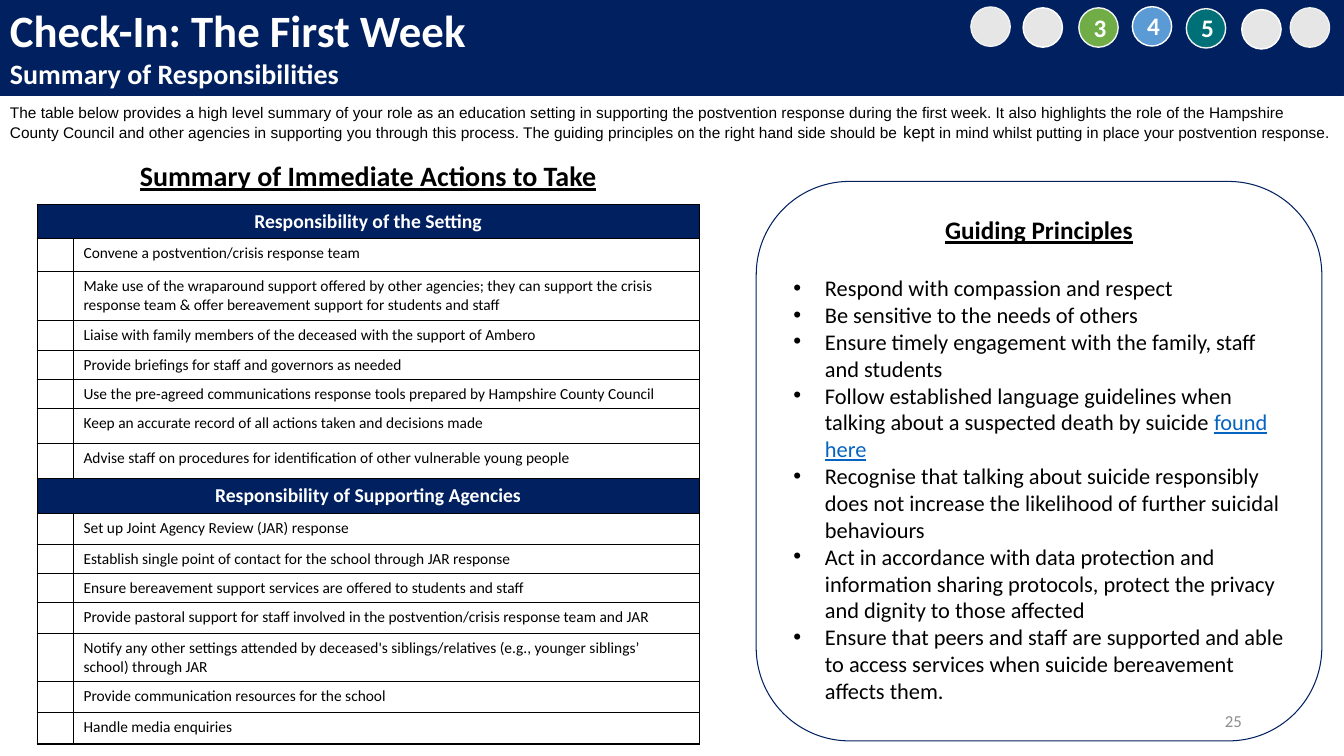
from lxml import etree
from pptx import Presentation
from pptx.dml.color import RGBColor
from pptx.enum.shapes import MSO_SHAPE
from pptx.enum.text import MSO_ANCHOR, PP_ALIGN
from pptx.oxml.ns import qn
from pptx.util import Pt

RECT, ROUNDED = MSO_SHAPE.RECTANGLE, MSO_SHAPE.ROUNDED_RECTANGLE
CIRCLE = MSO_SHAPE.FLOWCHART_CONNECTOR
LEFT, CENTER, RIGHT = PP_ALIGN.LEFT, PP_ALIGN.CENTER, PP_ALIGN.RIGHT
TOP, MIDDLE = MSO_ANCHOR.TOP, MSO_ANCHOR.MIDDLE

NAVY = RGBColor(0x00, 0x20, 0x60)
WHITE = RGBColor(0xFF, 0xFF, 0xFF)
BLACK = RGBColor(0x00, 0x00, 0x00)
PALE = RGBColor(0xF2, 0xF2, 0xF2)
GREY = RGBColor(0xE7, 0xE6, 0xE6)
GREEN = RGBColor(0x70, 0xAD, 0x47)
BLUE = RGBColor(0x5B, 0x9B, 0xD5)
TEAL = RGBColor(0x00, 0x70, 0x78)
LINK = RGBColor(0x05, 0x63, 0xC1)
NUMBER_GREY = RGBColor(0x8C, 0x8C, 0x8C)

# Content
TITLE = "Check-In: The First Week"
SUBTITLE = "Summary of Responsibilities"
INTRO = [
    ("The table below provides a high level summary of your role as an education setting in "
     "supporting the postvention response during the first week. It also highlights the role of "
     "the Hampshire County Council and other agencies in supporting you through this process. "
     "The guiding principles on the right hand side should be ", 11),
    ("kept", 12),
    (" in mind whilst putting in place your postvention response.", 11),
]
# Table rows: kind, text, height
ACTIONS = [
    ("title", "Summary of Immediate Actions to Take", 35.3),
    ("header", "Responsibility of the Setting", 24),
    ("item", "Convene a postvention/crisis response team", 23.5),
    ("item", "Make use of the wraparound support offered by other agencies; they can support the "
             "crisis response team & offer bereavement support for students and staff", 35),
    ("item", "Liaise with family members of the deceased with the support of Ambero", 21.5),
    ("item", "Provide briefings for staff and governors as needed", 20.7),
    ("item", "Use the pre-agreed communications response tools prepared by Hampshire County "
             "Council", 20.6),
    ("item", "Keep an accurate record of all actions taken and decisions made", 25),
    ("item", "Advise staff on procedures for identification of other vulnerable young people", 25),
    ("header", "Responsibility of Supporting Agencies", 25),
    ("item", "Set up Joint Agency Review (JAR) response", 22),
    ("item", "Establish single point of contact for the school through JAR response", 20.6),
    ("item", "Ensure bereavement support services are offered to students and staff", 20.6),
    ("item", "Provide pastoral support for staff involved in the postvention/crisis response "
             "team and JAR", 22),
    ("item", "Notify any other settings attended by deceased's siblings/relatives (e.g., younger "
             "siblings’ school) through JAR", 33.8),
    ("item", "Provide communication resources for the school", 22),
    ("item", "Handle media enquiries", 22.5),
]
ROW_FORMATS = {
    "title": {"size": Pt(20), "bold": True, "underline": True, "color": BLACK},
    "header": {"size": Pt(14), "bold": True, "color": WHITE},
    "item": {"size": Pt(11), "color": BLACK},
}
PRINCIPLES_HEADING = "Guiding Principles"
# Each principle: plain text, link text
PRINCIPLES = [
    ("Respond with compassion and respect", ""),
    ("Be sensitive to the needs of others", ""),
    ("Ensure timely engagement with the family, staff and students", ""),
    ("Follow established language guidelines when talking about a suspected death by suicide ",
     "found here"),
    ("Recognise that talking about suicide responsibly does not increase the likelihood of "
     "further suicidal behaviours", ""),
    ("Act in accordance with data protection and information sharing protocols, protect the "
     "privacy and dignity to those affected", ""),
    ("Ensure that peers and staff are supported and able to access services when suicide "
     "bereavement affects them.", ""),
]
# Step markers: number on the active ones, left, top, fill, line
STEPS = [
    ("", 693.5, 5, GREY, PALE),
    ("", 730.8, 5.6, GREY, WHITE),
    ("3", 770.6, 5.6, GREEN, PALE),
    ("4", 808.8, 4.8, BLUE, WHITE),
    ("5", 847.4, 6.2, TEAL, PALE),
    ("", 887, 6.9, GREY, WHITE),
    ("", 921.6, 5.6, GREY, PALE),
]
STEP_SIZE = 28.1
PAGE = "25"

deck = Presentation()
deck.slide_width, deck.slide_height = Pt(960), Pt(540)
slide = deck.slides.add_slide(deck.slide_layouts[6])


def write(paragraph, text, color=BLACK, name="Calibri", **formats):
    run = paragraph.add_run()
    run.text = text
    run.font.color.rgb = color
    for key, value in {"name": name, **formats}.items():
        setattr(run.font, key, value)


def set_frame(shape, anchor=TOP, wrap=True):
    frame = shape.text_frame
    frame.word_wrap, frame.vertical_anchor = wrap, anchor
    return frame


def add_panel(kind, left, top, width, height, fill, line, weight=0.75):
    panel = slide.shapes.add_shape(kind, Pt(left), Pt(top), Pt(width), Pt(height))
    panel.shadow.inherit = False
    if fill is None:
        panel.fill.background()
    else:
        panel.fill.solid()
        panel.fill.fore_color.rgb = fill
    panel.line.color.rgb, panel.line.width = line, Pt(weight)
    return set_frame(panel, MIDDLE)


def add_text(left, top, width, height, anchor=TOP, wrap=True):
    return set_frame(slide.shapes.add_textbox(Pt(left), Pt(top), Pt(width), Pt(height)),
                     anchor, wrap)


def add_bullet(paragraph):
    props = paragraph._p.get_or_add_pPr()
    props.set("marL", str(Pt(22.5)))
    props.set("indent", str(-Pt(22.5)))
    etree.SubElement(props, qn("a:buFont"), typeface="Arial")
    etree.SubElement(props, qn("a:buChar"), char="•")


def set_borders(cell, visible):
    props = cell._tc.get_or_add_tcPr()
    for side in "LRTB":
        edge = etree.SubElement(props, qn("a:ln" + side), w=str(Pt(1)))
        if side in visible:
            fill = etree.SubElement(edge, qn("a:solidFill"))
            etree.SubElement(fill, qn("a:srgbClr"), val=str(BLACK))
        else:
            etree.SubElement(edge, qn("a:noFill"))


# Title bar
bar = add_panel(RECT, 0, -2.5, 960, 70.6, NAVY, NAVY)
for line, (text, size) in enumerate([(TITLE, 32), (SUBTITLE, 20)]):
    paragraph = bar.add_paragraph() if line else bar.paragraphs[0]
    paragraph.alignment = LEFT
    write(paragraph, text, WHITE, size=Pt(size), bold=True)

# Actions table
actions = slide.shapes.add_table(len(ACTIONS), 2, Pt(26.5), Pt(110.9), Pt(473),
                                 Pt(sum(row[2] for row in ACTIONS))).table
actions.first_row = actions.horz_banding = False
actions.columns[0].width, actions.columns[1].width = Pt(26), Pt(447)
for index, (kind, text, height) in enumerate(ACTIONS):
    actions.rows[index].height = Pt(height)
    check, label = actions.cell(index, 0), actions.cell(index, 1)
    for cell in (check, label):
        set_borders(cell, "B" if kind == "title" else "LRTB")
        cell.fill.solid()
        cell.fill.fore_color.rgb = NAVY if kind == "header" else WHITE
    if kind == "item":
        etree.SubElement(check.text_frame.paragraphs[0]._p, qn("a:endParaRPr"), sz="1100")
    else:
        check.merge(label)
        label = check
    paragraph = label.text_frame.paragraphs[0]
    paragraph.alignment = LEFT if kind == "item" else CENTER
    write(paragraph, text, **ROW_FORMATS[kind])

# Guiding principles
principles = add_panel(ROUNDED, 540.2, 129.6, 404, 399.6, None, NAVY)
principles.margin_bottom = Pt(6.2)
heading = principles.paragraphs[0]
heading.alignment, heading.space_after = CENTER, Pt(21)
write(heading, PRINCIPLES_HEADING, size=Pt(18), bold=True, underline=True)
for text, link in PRINCIPLES:
    paragraph = principles.add_paragraph()
    paragraph.alignment = LEFT
    add_bullet(paragraph)
    write(paragraph, text, size=Pt(16))
    if link:
        write(paragraph, link, LINK, size=Pt(16), underline=True)

# Introduction
intro = add_text(0, 70.2, 960, 35.3).paragraphs[0]
for text, size in INTRO:
    write(intro, text, name="Arial", size=Pt(size))

# Step markers
for number, left, top, fill, line in STEPS:
    add_panel(CIRCLE, left, top, STEP_SIZE, STEP_SIZE, fill, line, 1)
    if number:
        digit = add_text(left + 3.5, top - 0.7, 21, 29, wrap=False).paragraphs[0]
        write(digit, number, WHITE, size=Pt(18), bold=True)

# Page number
page = add_text(678.2, 500.4, 216, 28.8, MIDDLE).paragraphs[0]
page.alignment = RIGHT
write(page, PAGE, NUMBER_GREY, size=Pt(12))

deck.save("out.pptx")
